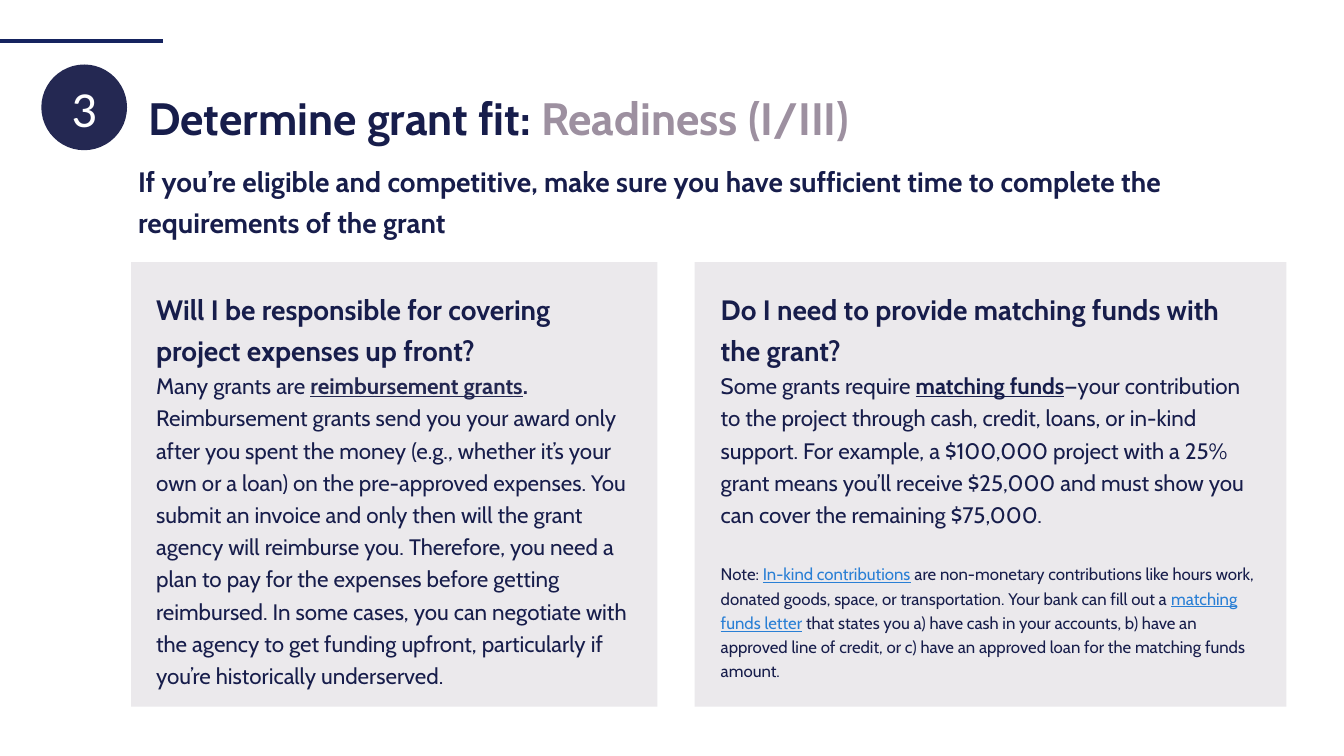
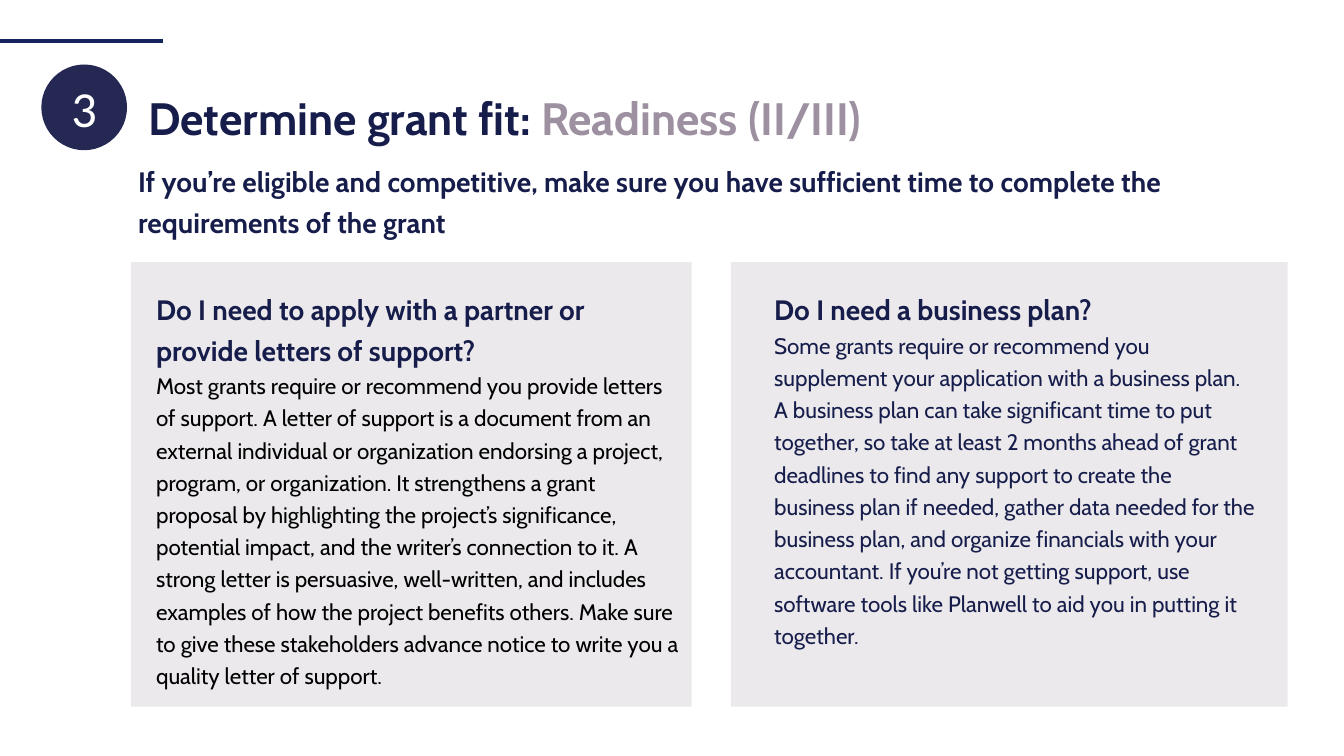
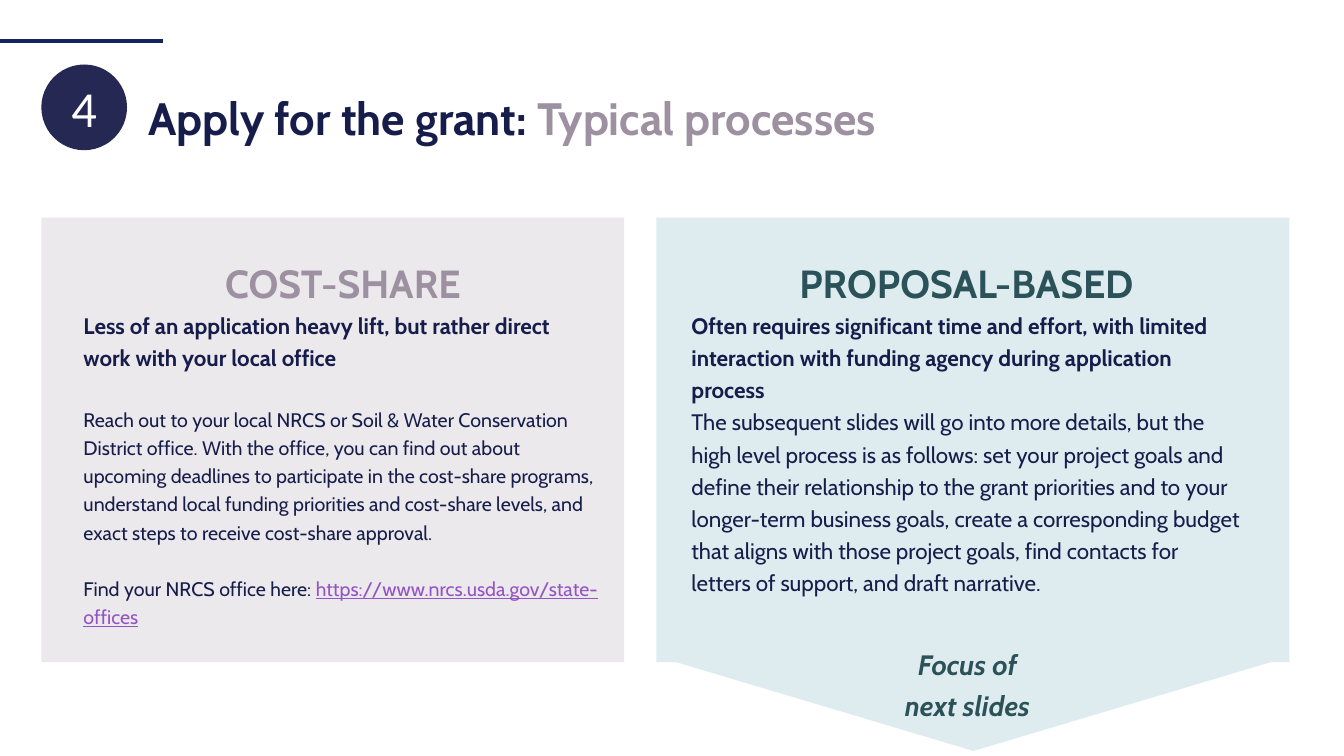
from lxml import etree
from pptx import Presentation
from pptx.dml.color import RGBColor
from pptx.enum.shapes import MSO_CONNECTOR, MSO_SHAPE
from pptx.enum.text import MSO_ANCHOR, MSO_AUTO_SIZE, PP_ALIGN
from pptx.oxml.ns import qn
from pptx.util import Pt

PX = 9144
LEFT, CENTER = PP_ALIGN.LEFT, PP_ALIGN.CENTER
MIDDLE, TOP = MSO_ANCHOR.MIDDLE, MSO_ANCHOR.TOP
NO_FIT = MSO_AUTO_SIZE.NONE
STRAIGHT = MSO_CONNECTOR.STRAIGHT
RECT, OVAL, DOWN_ARROW = MSO_SHAPE.RECTANGLE, MSO_SHAPE.OVAL, MSO_SHAPE.DOWN_ARROW
TITLE_ONLY = 5
COLORS = {
    "navy": "171D4B", "ink": "242852", "rule": "15235F", "mauve": "9D90A0",
    "gray": "EBE9EC", "ice": "DEECEF", "teal": "2B5259", "link": "297FD5",
    "visited": "9454C3", "white": "FFFFFF", "black": "000000",
}
PANEL_H = 441


def rgb(name):
    return RGBColor.from_string(COLORS[name])


class Deck:
    """Holds the shared style and the slide being built."""

    def __init__(self):
        self.prs = Presentation()
        self.prs.slide_width, self.prs.slide_height = 1333 * PX, 750 * PX
        self.s = None

    def slide(self, number, topic, detail):
        self.s = self.prs.slides.add_slide(self.prs.slide_layouts[TITLE_ONLY])
        self.rule(0, 41, 162, 41)
        title = self.s.shapes.title
        title.left, title.top, title.width, title.height = self.px(137, 73, 1138, 66)
        tf = self.frame(title, anchor=MIDDLE)
        self.text(tf, topic + ": ", size=32.4, bold=True, spacing=1.4)
        self.text(tf, detail, join=True, size=32.4, bold=True, color="mauve")
        badge = self.shape(OVAL, 41, 64, 85, 85, "ink")
        tf = self.frame(badge, inset=0, anchor=MIDDLE)
        self.text(tf, number, size=36, font="Calibri", color="white", align=CENTER, spacing=1)

    def px(self, *lengths):
        return [n * PX for n in lengths]

    def rule(self, x1, y1, x2, y2):
        line = self.s.shapes.add_connector(STRAIGHT, *self.px(x1, y1, x2, y2))
        line.line.color.rgb = rgb("rule")
        line.line.width = Pt(3)
        etree.SubElement(line._element.spPr, qn("a:effectLst"))

    def shape(self, kind, x, y, w, h, fill):
        sp = self.s.shapes.add_shape(kind, *self.px(x, y, w, h))
        sp.shadow.inherit = False
        sp.fill.solid()
        sp.fill.fore_color.rgb = rgb(fill)
        sp.line.fill.background()
        return sp

    def frame(self, sp, inset=None, anchor=TOP):
        tf = sp.text_frame
        tf.word_wrap = True
        tf.auto_size = NO_FIT
        tf.vertical_anchor = anchor
        if inset is not None:
            tf.margin_left = tf.margin_right = tf.margin_top = tf.margin_bottom = inset * PX
        return tf

    def box(self, x, y, w, h, inset=None):
        return self.frame(self.s.shapes.add_textbox(*self.px(x, y, w, h)), inset)

    def text(self, tf, text, join=False, size=16, color="navy", bold=False, italic=False,
             underline=False, font="Cabin", align=LEFT, spacing=1.2, before=0):
        p = tf.paragraphs[-1]
        if not join:
            if p.runs:
                p = tf.add_paragraph()
            p.alignment, p.line_spacing, p.space_before = align, spacing, Pt(before)
        r = p.add_run()
        r.text = text
        f = r.font
        f.name, f.size, f.bold, f.italic, f.underline = font, Pt(size), bold, italic, underline
        f.color.rgb = rgb(color)

    def lead(self):
        tf = self.box(137, 157, 1161, 113, inset=0)
        self.text(tf, "If you’re eligible and competitive, make sure you have sufficient time "
                      "to complete the requirements of the grant", size=20, bold=True)

    def question(self, panel_x, panel_w, text_x, text_w, heading):
        self.shape(RECT, panel_x, 260, panel_w, PANEL_H, "gray")
        tf = self.box(text_x, 279, text_w, PANEL_H)
        self.text(tf, heading, size=20, bold=True)
        return tf

    def process(self, panel_x, panel_w, fill, text_x, text_w, heading, color, summary):
        self.shape(RECT, panel_x, 216, panel_w, PANEL_H, fill)
        tf = self.box(text_x, 243, text_w, 388)
        self.text(tf, heading, size=28, bold=True, color=color, align=CENTER)
        self.text(tf, summary, bold=True)
        return tf


def funding_slide(deck):
    deck.slide("3", "Determine grant fit", "Readiness (I/III)")
    deck.lead()
    tf = deck.question(130, 522, 145, 491,
                       "Will I be responsible for covering project expenses up front?")
    deck.text(tf, "Many grants are ")
    deck.text(tf, "reimbursement grants", join=True, color="ink", bold=True, underline=True)
    deck.text(tf, ". ", join=True, color="ink", bold=True)
    deck.text(tf, "Reimbursement grants send you your award only after you spent the money "
                  "(e.g., whether it’s your own or a loan) on the pre-approved expenses. You "
                  "submit an invoice and only then will the grant agency will reimburse you. "
                  "Therefore, you need a plan to pay for the expenses before getting reimbursed. "
                  "In some cases, you can negotiate with the agency to get funding upfront, "
                  "particularly if you’re historically underserved.", join=True)

    tf = deck.question(689, 587, 705, 552, "Do I need to provide matching funds with the grant?")
    deck.text(tf, "Some grants require ")
    deck.text(tf, "matching funds", join=True, bold=True, underline=True)
    deck.text(tf, "—your contribution to the project through cash, credit, loans, or in-kind "
                  "support. For example, a $100,000 project with a 25% grant means you’ll receive "
                  "$25,000 and must show you can cover the remaining $75,000.", join=True)
    deck.text(tf, "Note: ", size=12, before=23)
    deck.text(tf, "In-kind contributions", join=True, size=12, color="link", underline=True)
    deck.text(tf, " are non-monetary contributions like hours work, donated goods, space, or "
                  "transportation. Your bank can fill out a ", join=True, size=12)
    deck.text(tf, "matching funds letter", join=True, size=12, color="link", underline=True)
    deck.text(tf, " that states you a) have cash in your accounts, b) have an approved line of "
                  "credit, or c) have an approved loan for the matching funds amount.",
              join=True, size=12)


def support_slide(deck):
    deck.slide("3", "Determine grant fit", "Readiness (II/III)")
    deck.lead()
    tf = deck.question(130, 556, 145, 540,
                       "Do I need to apply with a partner or provide letters of support?")
    deck.text(tf, "Most grants require or recommend you provide letters of support. A letter of "
                  "support is a document from an external individual or organization endorsing a "
                  "project, program, or organization. It strengthens a grant proposal by "
                  "highlighting the project’s significance, potential impact, and the writer’s "
                  "connection to it. A strong letter is persuasive, well-written, and includes "
                  "examples of how the project benefits others. Make sure to give these "
                  "stakeholders advance notice to write you a quality letter of support.",
              color="black")

    tf = deck.question(725, 552, 758, 499, "Do I need a business plan?")
    deck.text(tf, "Some grants require or recommend you supplement your application with a "
                  "business plan. A business plan can take significant time to put together, so "
                  "take at least 2 months ahead of grant deadlines to find any support to create "
                  "the business plan if needed, gather data needed for the business plan, and "
                  "organize financials with your accountant. If you’re not getting support, use "
                  "software tools like Planwell to aid you in putting it together.")


def process_slide(deck):
    deck.slide("4", "Apply for the grant", "Typical processes")
    tf = deck.process(41, 578, "gray", 73, 534, "COST-SHARE", "mauve",
                      "Less of an application heavy lift, but rather direct work with your "
                      "local office")
    deck.text(tf, "Reach out to your local NRCS or Soil & Water Conservation District office. "
                  "With the office, you can find out about upcoming deadlines to participate in "
                  "the cost-share programs, understand local funding priorities and cost-share "
                  "levels, and exact steps to receive cost-share approval.", size=14, before=23)
    deck.text(tf, "Find your NRCS office here: ", size=14, before=20)
    deck.text(tf, "https://www.nrcs.usda.gov/state-offices", join=True, size=14,
              color="visited", underline=True)

    tf = deck.process(651, 628, "ice", 676, 565, "PROPOSAL-BASED", "teal",
                      "Often requires significant time and effort, with limited interaction "
                      "with funding agency during application process")
    deck.text(tf, "The subsequent slides will go into more details, but the high level process "
                  "is as follows: set your project goals and define their relationship to the "
                  "grant priorities and to your longer-term business goals, create a "
                  "corresponding budget that aligns with those project goals, find contacts for "
                  "letters of support, and draft narrative.")

    arrow = deck.shape(DOWN_ARROW, 664, 654, 603, 91, "ice")
    arrow.adjustments[0], arrow.adjustments[1] = 0.49, 0.99
    tf = deck.box(814, 636, 291, 81, inset=0)
    for line in ("Focus of", "next slides"):
        deck.text(tf, line, size=20, bold=True, italic=True, color="teal", align=CENTER)


def main():
    deck = Deck()
    funding_slide(deck)
    support_slide(deck)
    process_slide(deck)
    deck.prs.save("out.pptx")


if __name__ == "__main__":
    main()
